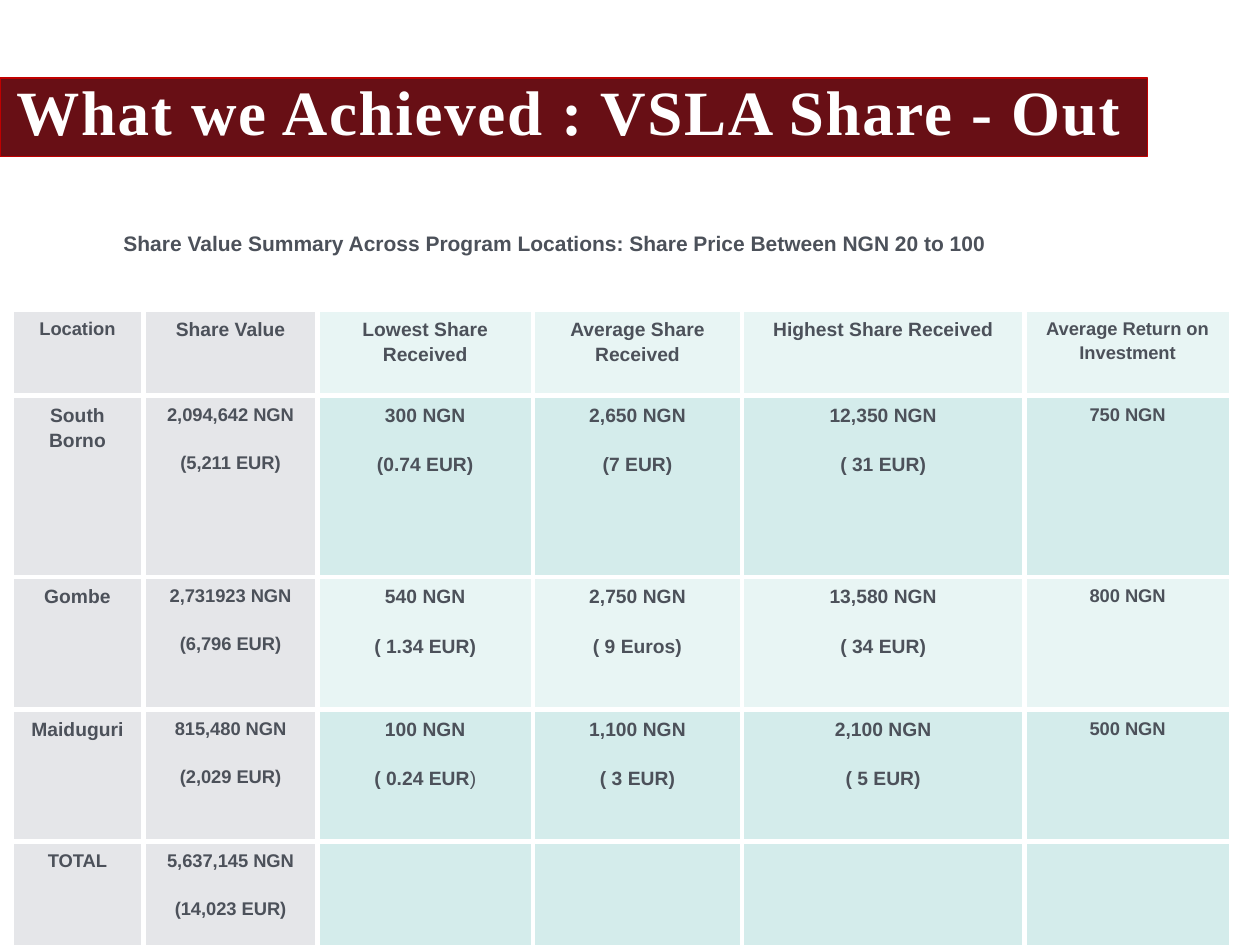
from lxml.etree import SubElement
from pptx import Presentation
from pptx.dml.color import RGBColor
from pptx.enum.text import MSO_ANCHOR, PP_ALIGN
from pptx.oxml.ns import qn
from pptx.util import Inches, Pt

WHITE = RGBColor(0xFF, 0xFF, 0xFF)
WINE = RGBColor(0x68, 0x0F, 0x15)
RED = RGBColor(0xC0, 0x00, 0x00)
INK = RGBColor(0x4C, 0x51, 0x5A)
GREY = RGBColor(0xE5, 0xE6, 0xE9)
PALE = RGBColor(0xE8, 0xF5, 0xF4)
TEAL = RGBColor(0xD4, 0xEC, 0xEB)

TITLE = "What we Achieved : VSLA Share - Out"
INTRO = "Share Value Summary Across Program Locations: Share Price Between NGN 20 to 100"
ROWS = [
    (PALE, ["Location", "Share Value", "Lowest Share Received", "Average Share Received",
            "Highest Share Received", "Average Return on Investment"]),
    (TEAL, ["South Borno", "2,094,642 NGN\n(5,211 EUR)", "300 NGN\n(0.74 EUR)",
            "2,650 NGN\n(7 EUR)", "12,350 NGN\n( 31 EUR)", "750 NGN"]),
    (PALE, ["Gombe", "2,731923 NGN\n(6,796 EUR)", "540 NGN\n( 1.34 EUR)",
            "2,750 NGN\n( 9 Euros)", "13,580 NGN\n( 34 EUR)", "800 NGN"]),
    (TEAL, ["Maiduguri", "815,480 NGN\n(2,029 EUR)", "100 NGN\n( 0.24 EUR|)",
            "1,100 NGN\n( 3 EUR)", "2,100 NGN\n( 5 EUR)", "500 NGN"]),
    (TEAL, ["TOTAL", "5,637,145 NGN\n(14,023 EUR)", "", "", "", ""]),
]
WIDTHS = [1.05, 1.38, 1.71, 1.66, 2.24, 1.64]
HEIGHTS = [1.08, 0.68, 1.44, 1.05, 1.05, 1.05]
SMALL = {"Location", "TOTAL"}


def put(frame, text, size=11, font="Arial", color=INK, align=PP_ALIGN.CENTER,
        lead=1.15, after=14, track=0):
    for i, line in enumerate(text.split("\n")):
        para = frame.paragraphs[0] if i == 0 else frame.add_paragraph()
        para.alignment = align
        para.line_spacing = lead
        para.space_before = Pt(0)
        para.space_after = Pt(after)
        para.font.size = Pt(size)
        for n, part in enumerate(line.split("|")):
            run = para.add_run()
            run.text = part
            run.font.name = font
            run.font.size = Pt(size)
            run.font.bold = n == 0
            run.font.color.rgb = color
            if track:
                run.font._element.set("spc", str(track * 100))


def edge(cell, sides, width):
    props = cell._tc.get_or_add_tcPr()
    for side, points in zip(sides, width):
        line = SubElement(props, qn("a:ln" + side), w=str(Pt(points)))
        fill = SubElement(line, qn("a:solidFill"))
        SubElement(fill, qn("a:srgbClr"), val=str(WHITE))


def style(cell, color, width=(3, 3, 3, 3)):
    edge(cell, "LRTB", width)
    cell.fill.solid()
    cell.fill.fore_color.rgb = color
    cell.margin_left = cell.margin_right = Inches(0.08)
    cell.margin_top = cell.margin_bottom = Inches(0.05)


def main():
    deck = Presentation()
    deck.slide_width, deck.slide_height = Inches(10), Inches(7.5)
    slide = deck.slides.add_slide(deck.slide_layouts[5])

    head = slide.shapes.title
    head.left, head.top = Inches(0), Inches(0.62)
    head.width, head.height = Inches(9.11), Inches(0.62)
    head.fill.solid()
    head.fill.fore_color.rgb = WINE
    head.line.color.rgb = RED
    head.line.width = Pt(0.75)
    frame = head.text_frame
    frame.word_wrap = True
    frame.vertical_anchor = MSO_ANCHOR.MIDDLE
    frame.margin_left = Inches(0.13)
    frame.margin_right = frame.margin_top = frame.margin_bottom = 0
    put(frame, TITLE, size=36, font="Times New Roman", color=WHITE,
        align=PP_ALIGN.LEFT, lead=0.8, after=0, track=1)

    grid = slide.shapes.add_table(
        len(HEIGHTS), len(WIDTHS), Inches(0.09), Inches(1.38),
        Inches(sum(WIDTHS)), Inches(sum(HEIGHTS))).table
    for col, width in zip(grid.columns, WIDTHS):
        col.width = Inches(width)
    for row, height in zip(grid.rows, HEIGHTS):
        row.height = Inches(height)

    for c in range(len(WIDTHS)):
        style(grid.cell(0, c), WHITE, (1, 1, 1, 3))
    intro = grid.cell(0, 0)
    intro.merge(grid.cell(0, 4))
    intro.margin_left, intro.margin_top = Inches(0.89), Inches(0.44)
    put(intro.text_frame, INTRO, size=12, align=PP_ALIGN.LEFT)

    for r, (tint, texts) in enumerate(ROWS, 1):
        for c, text in enumerate(texts):
            cell = grid.cell(r, c)
            style(cell, GREY if c < 2 else tint)
            small = text in SMALL or c in (1, 5) and text != "Share Value"
            if text:
                put(cell.text_frame, text, size=10.5 if small else 11)

    deck.save("out.pptx")


if __name__ == "__main__":
    main()
